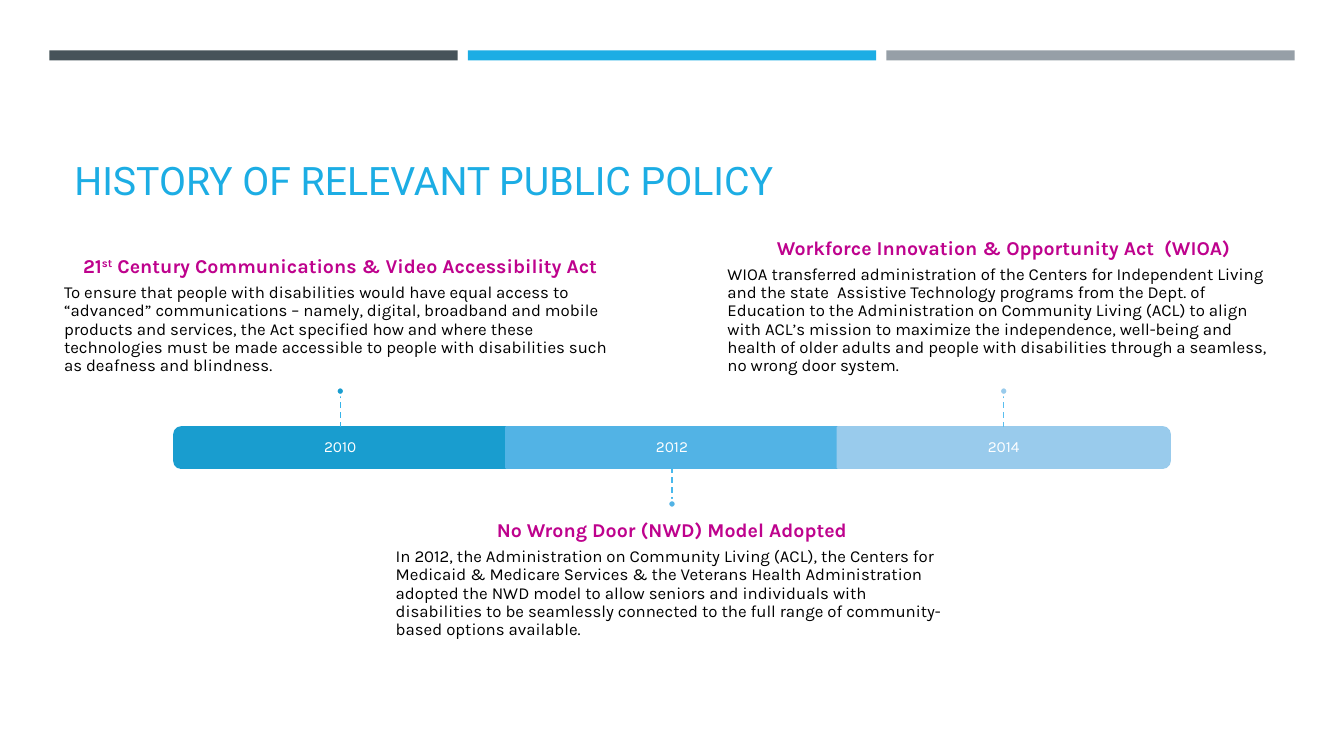
from lxml.etree import SubElement
from pptx import Presentation
from pptx.dml.color import RGBColor
from pptx.enum.dml import MSO_LINE
from pptx.enum.shapes import MSO_CONNECTOR, MSO_SHAPE
from pptx.enum.text import MSO_ANCHOR, PP_ALIGN
from pptx.oxml.ns import qn
from pptx.util import Inches, Pt

COLORS = {
    "slate": "465359", "sky": "1CADE4", "gray": "969FA7",
    "heading": "BE028D", "body": "000000", "white": "FFFFFF",
    "2010": "199DCF", "2012": "52B3E5", "2014": "99CBEC",
    "2010 stem": "36B3E9", "2012 stem": "48B8EC", "2014 stem": "5ABEEF",
}
FORMATS = {
    "title": {"name": "Roboto", "size": Pt(28), "color": "sky"},
    "heading": {"name": "Karla", "size": Pt(14), "bold": True, "color": "heading"},
    "body": {"name": "Karla", "size": Pt(12), "color": "body"},
    "year": {"name": "Karla", "size": Pt(11), "color": "white"},
}
# Year, whether the text sits above the bar, heading runs, body
ERAS = [
    ("2010", True,
     ["21", "st", " Century Communications & Video Accessibility Act"],
     "To ensure that people with disabilities would have equal access to “advanced” "
     "communications – namely, digital, broadband and mobile products and services, "
     "the Act specified how and where these technologies must be made accessible to "
     "people with disabilities such as deafness and blindness."),
    ("2012", False,
     ["No Wrong Door (NWD) Model Adopted"],
     "In 2012, the Administration on Community Living (ACL), the Centers for Medicaid "
     "& Medicare Services & the Veterans Health Administration adopted the NWD model "
     "to allow seniors and individuals with disabilities to be seamlessly connected "
     "to the full range of community-based options available."),
    ("2014", True,
     ["Workforce Innovation & Opportunity Act  (WIOA)"],
     "WIOA transferred administration of the Centers for Independent Living and the "
     "state  Assistive Technology programs from the Dept. of Education to the "
     "Administration on Community Living (ACL) to align with ACL’s mission to maximize "
     "the independence, well-being and health of older adults and people with "
     "disabilities through a seamless, no wrong door system."),
]


def color_of(name):
    return RGBColor.from_string(COLORS[name])


def add_block(slide, kind, box, fill, line=None):
    shape = slide.shapes.add_shape(kind, *map(Inches, box))
    shape.shadow.inherit = False
    shape.fill.solid()
    shape.fill.fore_color.rgb = color_of(fill)
    if line:
        shape.line.color.rgb = color_of(line)
        shape.line.width = Pt(1.75)
    else:
        shape.line.fill.background()
    return shape


def add_text_frame(slide, box, anchor, margins):
    frame = slide.shapes.add_textbox(*map(Inches, box)).text_frame
    frame.word_wrap = True
    frame.vertical_anchor = anchor
    for side, margin in zip(("left", "top", "right", "bottom"), margins):
        setattr(frame, f"margin_{side}", Inches(margin))
    return frame


def add_run(paragraph, text, style):
    run = paragraph.add_run()
    run.text = text
    for name, value in FORMATS[style].items():
        if name == "color":
            run.font.color.rgb = color_of(value)
        else:
            setattr(run.font, name, value)
    return run


def format_paragraph(paragraph, alignment, space_after):
    values = {"alignment": alignment, "line_spacing": 0.9, "space_after": Pt(space_after)}
    for name, value in values.items():
        setattr(paragraph, name, value)


def add_header_bars(slide, left, top, width, height):
    gap = 0.1
    bar_width = (width - 2 * gap) / 3
    for column, fill in enumerate(("slate", "sky", "gray")):
        bar_left = left + column * (bar_width + gap)
        add_block(slide, MSO_SHAPE.RECTANGLE, (bar_left, top, bar_width, height), fill)


def add_title(slide, box):
    frame = add_text_frame(slide, box, MSO_ANCHOR.BOTTOM, (0.1, 0.05, 0.1, 0.05))
    paragraph = frame.paragraphs[0]
    paragraph.line_spacing = 0.9
    add_run(paragraph, "HISTORY OF RELEVANT PUBLIC POLICY", "title")


def add_segment(slide, year, column, left, top, width, height):
    """One stretch of the bar; the outer ones are rounded on their outer end."""
    if column == 1:
        segment = add_block(slide, MSO_SHAPE.RECTANGLE, (left, top, width, height), year, year)
    else:
        upright = (left + (width - height) / 2, top - (width - height) / 2, height, width)
        segment = add_block(slide, MSO_SHAPE.ROUND_2_SAME_RECTANGLE, upright, year, year)
        segment.rotation = 270 if column == 0 else 90
    frame = add_text_frame(slide, (left, top, width, height), MSO_ANCHOR.MIDDLE, (0.09,) * 4)
    format_paragraph(frame.paragraphs[0], PP_ALIGN.CENTER, 4)
    add_run(frame.paragraphs[0], year, "year")
    return segment


def add_stem(slide, year, center, start, end):
    """Dashed line from the bar with a dot at its far end."""
    stem = slide.shapes.add_connector(
        MSO_CONNECTOR.STRAIGHT, *map(Inches, (center, start, center, end)))
    stem.line.color.rgb = color_of(f"{year} stem")
    stem.line.width = Pt(1)
    stem.line.dash_style = MSO_LINE.DASH
    SubElement(stem.element.spPr, qn("a:effectLst"))
    dot = 0.08
    dot_top = end if end > start else end - dot
    add_block(slide, MSO_SHAPE.OVAL, (center - dot / 2, dot_top, dot, dot), year, "white")
    return stem


def add_callout(slide, box, above, heading, body):
    anchor = MSO_ANCHOR.BOTTOM if above else MSO_ANCHOR.TOP
    margins = (0, 0, 0, 0.12) if above else (0, 0.12, 0, 0)
    frame = add_text_frame(slide, box, anchor, margins)
    format_paragraph(frame.paragraphs[0], PP_ALIGN.CENTER, 4.9)
    for text in heading:
        run = add_run(frame.paragraphs[0], text, "heading")
        if text == "st":
            run.font._element.set("baseline", "30000")
    paragraph = frame.add_paragraph()
    format_paragraph(paragraph, PP_ALIGN.LEFT, 4.2)
    add_run(paragraph, body, "body")


def add_timeline(slide, left, top, width, height):
    segment_width = width / len(ERAS)
    stem_length, reach = 0.32, 0.4
    text_width, text_height = 5.48, 1.41
    for column, (year, above, heading, body) in enumerate(ERAS):
        segment_left = left + column * segment_width
        center = segment_left + segment_width / 2
        segment = add_segment(slide, year, column, segment_left, top, segment_width, height)
        start = top if above else top + height
        direction = -1 if above else 1
        stem = add_stem(slide, year, center, start, start + direction * stem_length)
        if not above:
            stem.begin_connect(segment, 2)
        text_top = start - reach - text_height if above else start + reach
        box = (center - text_width / 2, text_top, text_width, text_height)
        add_callout(slide, box, above, heading, body)


def main():
    presentation = Presentation()
    presentation.slide_width = Inches(13.33)
    presentation.slide_height = Inches(7.5)
    slide = presentation.slides.add_slide(presentation.slide_layouts[6])
    add_header_bars(slide, 0.49, 0.5, 12.35, 0.1)
    add_title(slide, (0.64, 0.77, 12.06, 1.3))
    add_timeline(slide, 1.73, 4.24, 9.87, 0.4)
    presentation.save("out.pptx")


if __name__ == "__main__":
    main()
